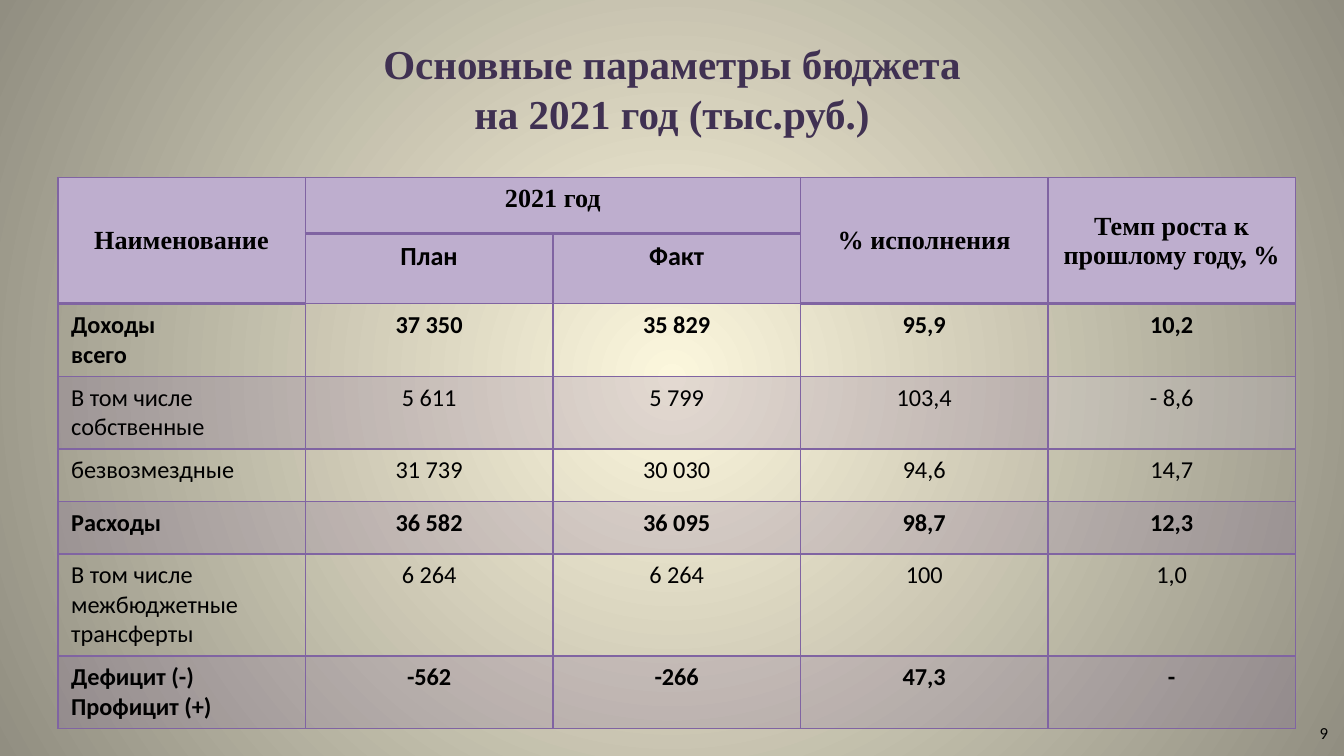
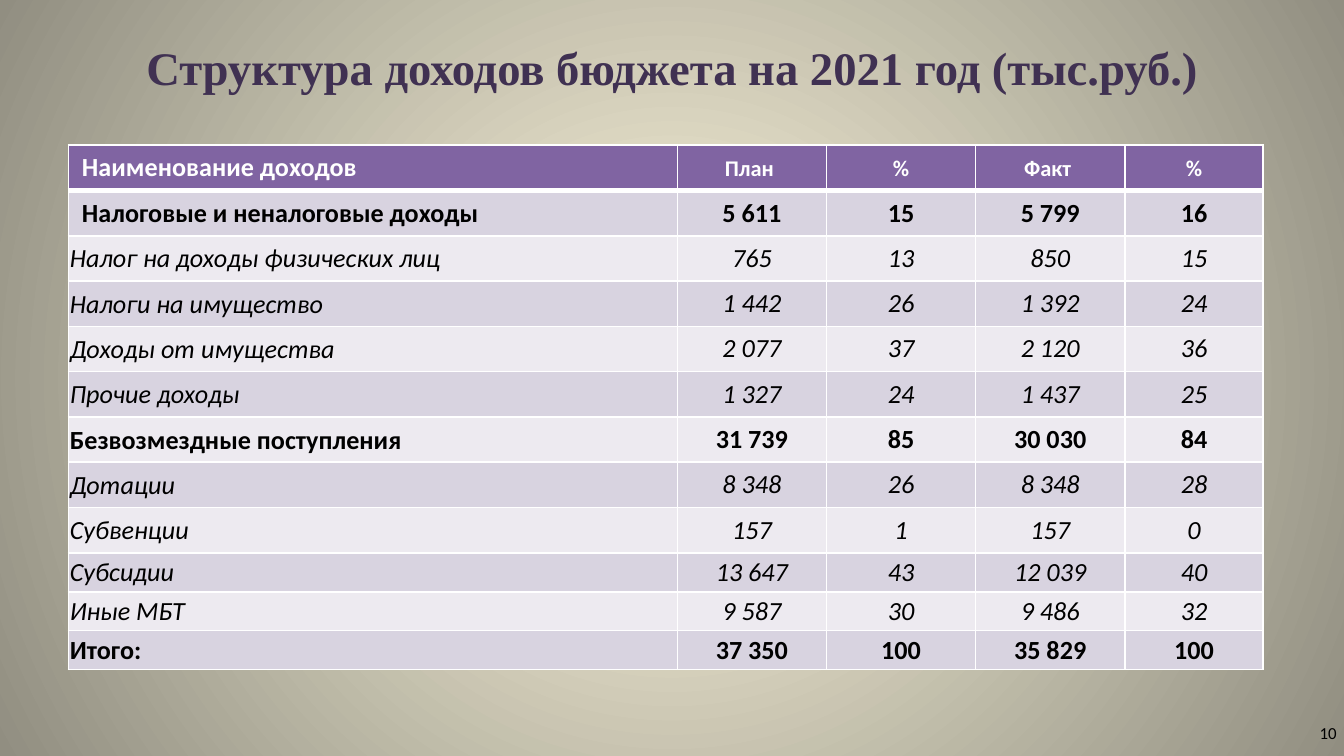
"""Build two budget slides: main parameters and income structure for 2021."""
from dataclasses import dataclass, field
from typing import Optional

from lxml import etree
from pptx import Presentation
from pptx import util as u
from pptx.dml import color as dml
from pptx.enum import text
from pptx.oxml import ns

COLORS = {
    "title": "403152", "black": "000000", "white": "FFFFFF",
    "purple": "8064A2", "header": "BEAECE", "lilac": "CCC1DA",
    "band": "D8D3E0", "pale": "EDEAF0",
    "glow": "FCF7DD", "edge": "918E81",
}
SERIF, SANS = "Times New Roman", "Calibri"
SLIDE_WIDTH = u.Inches(10)
SLIDE_HEIGHT = SLIDE_WIDTH * 9 // 16


def text_format(name: str, size: float, color: str = "black",
                bold: bool = False, italic: bool = False) -> dict:
    """Return the font values of one text style."""
    return {"name": name, "size": u.Pt(size), "bold": bold, "italic": italic, "color": color}


FORMATS = {
    "serif head": text_format(SERIF, 14, bold=True),
    "sans head": text_format(SANS, 14, bold=True),
    "total": text_format(SANS, 13, bold=True),
    "detail": text_format(SANS, 13),
    "white lead": text_format(SANS, 14, "white", bold=True),
    "white head": text_format(SANS, 12, "white", bold=True),
    "group": text_format(SANS, 14, bold=True),
    "item": text_format(SANS, 14, italic=True),
    "number": text_format(SANS, 9),
}


@dataclass(frozen=True)
class Fill:
    """A cell fill with its opacity in percent."""
    color: str
    opacity: int = 100


@dataclass(frozen=True)
class Row:
    """One table row; lead_style is for the first cell."""
    height: float
    style: str
    fill: Optional[Fill]
    texts: tuple
    lead_style: str = ""
    lead_centered: bool = False


@dataclass(frozen=True)
class Grid:
    """A table with its cell exceptions, keyed by row and column."""
    left: float
    top: float
    height: float
    columns: tuple
    rows: tuple
    border: str
    heavy_width: float
    heavy: frozenset
    tight: frozenset
    middle: frozenset
    merges: tuple = ()
    fills: dict = field(default_factory=dict)


@dataclass(frozen=True)
class Page:
    """One slide: title lines, title place and table."""
    number: int
    lines: tuple
    title_size: float
    title_top: float
    title_height: float
    grid: Grid


HEADER, TINT = Fill("header"), Fill("purple", 20)
BAND, PALE = Fill("band"), Fill("pale")

PARAMETERS = Grid(
    left=0.43, top=1.32, height=4.08, columns=(9.21 / 5,) * 5, border="purple",
    rows=(
        Row(0.42, "serif head", HEADER,
            ("Наименование", "2021 год", "", "% исполнения", "Темп роста к прошлому году, %"),
            lead_centered=True),
        Row(0.52, "sans head", HEADER, ("", "План", "Факт", "", "")),
        Row(0.38, "total", None, ("Доходы\nвсего", "37 350", "35 829", "95,9", "10,2")),
        Row(0.51, "detail", TINT,
            ("В том числе собственные", "5 611", "5 799", "103,4", "- 8,6")),
        Row(0.39, "detail", None, ("безвозмездные", "31 739", "30 030", "94,6", "14,7")),
        Row(0.39, "total", TINT, ("Расходы", "36 582", "36 095", "98,7", "12,3")),
        Row(0.31, "detail", None,
            ("В том числе межбюджетные трансферты", "6 264", "6 264", "100", "1,0")),
        Row(0.31, "total", TINT,
            ("Дефицит (-)\nПрофицит (+)", "-562", "-266", "47,3", "-")),
    ),
    heavy_width=2,
    heavy=frozenset({(0, column) for column in range(5)} | {(1, 0), (1, 3), (1, 4)}),
    tight=frozenset({(0, 4)}), middle=frozenset({(0, 0), (0, 3), (0, 4)}),
    merges=(((0, 0), (1, 0)), ((0, 1), (0, 2)), ((0, 3), (1, 3)), ((0, 4), (1, 4))),
    fills={(3, 4): Fill("lilac", 20)},
)

INCOMES = (
    ("group", ("Налоговые и неналоговые доходы", "5 611", "15", "5 799", "16")),
    ("item", ("Налог на доходы физических лиц", "765", "13", "850", "15")),
    ("item", ("Налоги на имущество", "1 442", "26", "1 392", "24")),
    ("item", ("Доходы от имущества", "2 077", "37", "2 120", "36")),
    ("item", ("Прочие доходы", "1 327", "24", "1 437", "25")),
    ("group", ("Безвозмездные поступления", "31 739", "85", "30 030", "84")),
    ("item", ("Дотации", "8 348", "26", "8 348", "28")),
    ("item", ("Субвенции", "157", "1", "157", "0")),
    ("item", ("Субсидии", "13 647", "43", "12 039", "40")),
    ("item", ("Иные МБТ", "9 587", "30", "9 486", "32")),
    ("group", ("Итого:", "37 350", "100", "35 829", "100")),
)
INCOME_TIGHT = frozenset(
    {(0, column) for column in range(1, 5)}
    | {(row, 0) for row in range(2, 12)}
    | {(row, column) for row in range(9, 12) for column in range(5)}
)
STRUCTURE = Grid(
    left=0.51, top=1.08, height=3.86, columns=(4.53, 1.11, 1.11, 1.11, 1.03), border="white",
    rows=(
        Row(0.29, "white head", Fill("purple"),
            ("Наименование доходов", "План ", "%", "Факт ", "%"), lead_style="white lead"),
        *(Row(0.29, style, PALE if index % 2 else BAND, texts)
          for index, (style, texts) in enumerate(INCOMES)),
    ),
    heavy_width=3, heavy=frozenset((0, column) for column in range(5)),
    tight=INCOME_TIGHT, middle=INCOME_TIGHT,
)

PAGES = (
    Page(9, ("Основные параметры бюджета", "на 2021 год (тыс.руб.)"), 22, 0.14, 1.03, PARAMETERS),
    Page(10, ("Структура доходов бюджета на 2021 год (тыс.руб.)",), 25, 0.23, 0.54, STRUCTURE),
)


def rgb(name: str) -> dml.RGBColor:
    """Look up a named colour."""
    return dml.RGBColor.from_string(COLORS[name])


def set_attributes(target, values: dict) -> None:
    """Set every attribute named in values."""
    for name, value in values.items():
        setattr(target, name, value)


def format_font(font, values: dict) -> None:
    """Apply a text style to a font."""
    set_attributes(font, {name: value for name, value in values.items() if name != "color"})
    font.color.rgb = rgb(values["color"])


def paint_background(master) -> None:
    """Give the master a radial gradient."""
    fill = master.background.fill
    fill.gradient()
    for stop, name in zip(fill.gradient_stops, ("glow", "edge")):
        stop.color.rgb = rgb(name)
    gradient = master.element.find(".//" + ns.qn("a:gradFill"))
    circle = etree.Element(ns.qn("a:path"), {"path": "circle"})
    etree.SubElement(circle, ns.qn("a:fillToRect"), dict.fromkeys("ltrb", "50000"))
    gradient.replace(gradient.find(ns.qn("a:lin")), circle)


def add_title(slide, page: Page) -> None:
    """Place and format the title."""
    title = slide.shapes.title
    set_attributes(title, {"left": u.Inches(0.5), "top": u.Inches(page.title_top),
                           "width": u.Inches(9), "height": u.Inches(page.title_height)})
    set_attributes(title.text_frame, {"vertical_anchor": text.MSO_ANCHOR.MIDDLE,
                                      "auto_size": text.MSO_AUTO_SIZE.NONE,
                                      "word_wrap": True})
    paragraph = title.text_frame.paragraphs[0]
    paragraph.alignment = text.PP_ALIGN.CENTER
    for index, line in enumerate(page.lines):
        if index:
            paragraph.add_line_break()
        run = paragraph.add_run()
        run.text = line
        format_font(run.font, text_format(SERIF, page.title_size, "title", bold=True))


def add_number(slide, number: int) -> None:
    """Write the page number in the lower right corner."""
    width = 0.27 if number < 10 else 0.33
    box = slide.shapes.add_textbox(*map(u.Inches, (9.72, 5.33, width, 0.25)))
    set_attributes(box.text_frame, {"word_wrap": False, "text": str(number),
                                    "auto_size": text.MSO_AUTO_SIZE.SHAPE_TO_FIT_TEXT})
    format_font(box.text_frame.paragraphs[0].runs[0].font, FORMATS["number"])


def draw_borders(cell, color: str, widths: dict) -> None:
    """Draw the four cell borders with widths in points."""
    properties = cell._tc.get_or_add_tcPr()
    for side, width in widths.items():
        line = etree.SubElement(properties, ns.qn(f"a:ln{side}"), w=str(u.Pt(width)))
        solid = etree.SubElement(line, ns.qn("a:solidFill"))
        etree.SubElement(solid, ns.qn("a:srgbClr"), val=COLORS[color])


def paint_cell(cell, fill: Optional[Fill]) -> None:
    """Fill a cell, or leave it clear."""
    if fill is None:
        cell.fill.background()
        return
    cell.fill.solid()
    cell.fill.fore_color.rgb = rgb(fill.color)
    if fill.opacity < 100:
        solid = cell._tc.tcPr.find(ns.qn("a:solidFill"))
        etree.SubElement(solid[0], ns.qn("a:alpha"), val=str(fill.opacity * 1000))


def write_cell(cell, row: Row, column: int) -> None:
    """Write and format the text of a cell."""
    lead = column == 0
    style = row.lead_style if lead and row.lead_style else row.style
    centered = not lead or row.lead_centered
    cell.text = row.texts[column]
    for paragraph in cell.text_frame.paragraphs:
        paragraph.alignment = text.PP_ALIGN.CENTER if centered else text.PP_ALIGN.LEFT
        for run in paragraph.runs:
            format_font(run.font, FORMATS[style])


def add_grid(slide, grid: Grid) -> None:
    """Draw a table."""
    frame = slide.shapes.add_table(
        len(grid.rows), len(grid.columns), u.Inches(grid.left), u.Inches(grid.top),
        u.Inches(sum(grid.columns)), u.Inches(grid.height))
    table = frame.table
    set_attributes(table, {"first_row": False, "horz_banding": False})
    for column, width in zip(table.columns, grid.columns):
        column.width = u.Inches(width)
    for start, end in grid.merges:
        table.cell(*start).merge(table.cell(*end))
    for r, row in enumerate(grid.rows):
        table.rows[r].height = u.Inches(row.height)
        for c in range(len(grid.columns)):
            cell = table.cell(r, c)
            top, bottom = (grid.heavy_width if spot in grid.heavy else 1
                           for spot in ((r - 1, c), (r, c)))
            draw_borders(cell, grid.border, {"L": 1, "R": 1, "T": top, "B": bottom})
            paint_cell(cell, grid.fills.get((r, c), row.fill))
            if (r, c) in grid.tight:
                set_attributes(cell, dict.fromkeys(
                    ("margin_left", "margin_top", "margin_right"), u.Inches(0.01)))
                cell.margin_bottom = 0
            if (r, c) in grid.middle:
                cell.vertical_anchor = text.MSO_ANCHOR.MIDDLE
            if not cell.is_spanned:
                write_cell(cell, row, c)
    frame.height = u.Inches(grid.height)


def main() -> None:
    """Build and save the presentation."""
    presentation = Presentation()
    set_attributes(presentation, {"slide_width": SLIDE_WIDTH, "slide_height": SLIDE_HEIGHT})
    paint_background(presentation.slide_master)
    for page in PAGES:
        slide = presentation.slides.add_slide(presentation.slide_layouts.get_by_name("Title Only"))
        add_title(slide, page)
        add_grid(slide, page.grid)
        add_number(slide, page.number)
    presentation.save("out.pptx")


if __name__ == "__main__":
    main()
